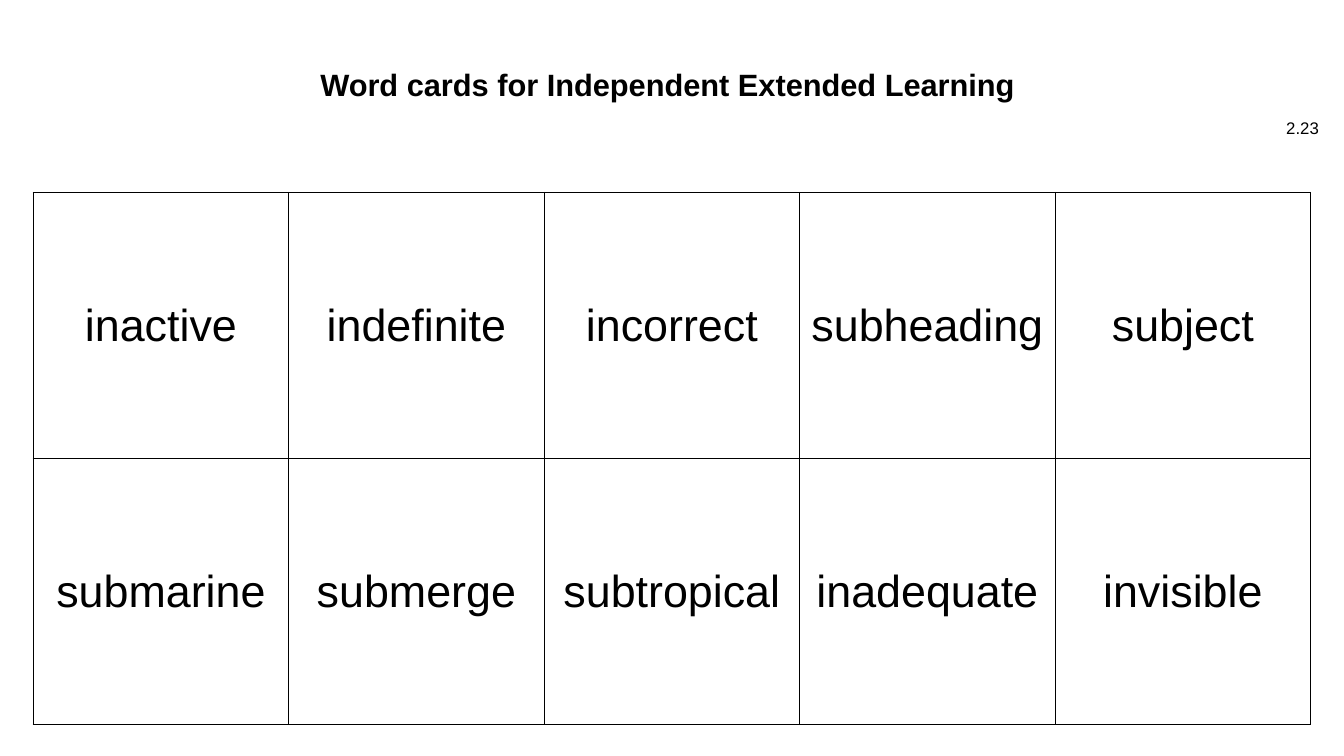
from dataclasses import dataclass

from lxml import etree
from pptx import Presentation, util as u
from pptx.dml.color import RGBColor
from pptx.enum import text
from pptx.oxml import ns

# Content
TITLE = "Word cards for Independent Extended Learning "
CARD_SET = "2.23"
WORDS = [
    ["inactive", "indefinite", "incorrect", "subheading", "subject"],
    ["submarine", "submerge", "subtropical", "inadequate", "invisible"],
]


@dataclass(frozen=True)
class Theme:
    font: str = "Arial"
    ink: str = "000000"
    paper: str = "FFFFFF"
    title_size: int = 22
    label_size: int = 12
    word_size: int = 32
    border: float = 1


THEME = Theme()

# Layout in inches: left, top, width, height
SLIDE = (13.33, 7.5)
TITLE_AREA = (2.31, 0.64, 8.71, 0.35)
LABEL_AREA = (12.55, 1.07, 0.63, 0.4)
GRID_LEFT, GRID_TOP = 0.33, 1.91
CARD_WIDTH, CARD_HEIGHT = 12.67 / len(WORDS[0]), 5.28 / len(WORDS)


def write(frame, words, size, align, bold=False):
    para = frame.paragraphs[0]
    para.text = words
    para.alignment = align
    font = para.font
    font.name, font.size, font.bold = THEME.font, u.Pt(size), bold
    font.color.rgb = RGBColor.from_string(THEME.ink)
    return para


def add_text(page, area, anchor, *style):
    frame = page.shapes.add_textbox(*map(u.Inches, area)).text_frame
    frame.word_wrap = True
    frame.vertical_anchor = anchor
    return write(frame, *style)


def outline(cell):
    properties = cell._tc.get_or_add_tcPr()
    for position, side in enumerate(("lnL", "lnR", "lnT", "lnB")):
        line = etree.Element(ns.qn(f"a:{side}"), w=str(u.Pt(THEME.border)))
        fill = etree.SubElement(line, ns.qn("a:solidFill"))
        etree.SubElement(fill, ns.qn("a:srgbClr"), val=THEME.ink)
        properties.insert(position, line)


def add_cards(page):
    rows, columns = len(WORDS), len(WORDS[0])
    area = (GRID_LEFT, GRID_TOP, columns * CARD_WIDTH, rows * CARD_HEIGHT)
    table = page.shapes.add_table(rows, columns, *map(u.Inches, area)).table
    table.first_row = table.horz_banding = False
    for r, row in enumerate(WORDS):
        for c, word in enumerate(row):
            cell = table.cell(r, c)
            cell.vertical_anchor = text.MSO_ANCHOR.MIDDLE
            cell.fill.solid()
            cell.fill.fore_color.rgb = RGBColor.from_string(THEME.paper)
            write(cell.text_frame, word, THEME.word_size, text.PP_ALIGN.CENTER)
            outline(cell)


def main():
    deck = Presentation()
    deck.slide_width, deck.slide_height = map(u.Inches, SLIDE)
    page = deck.slides.add_slide(deck.slide_layouts[6])

    # Heading and set number
    add_text(page, LABEL_AREA, text.MSO_ANCHOR.MIDDLE,
             CARD_SET, THEME.label_size, text.PP_ALIGN.RIGHT)
    title = add_text(page, TITLE_AREA, text.MSO_ANCHOR.TOP,
                     TITLE, THEME.title_size, text.PP_ALIGN.CENTER, True)
    title.line_spacing = 0.9

    # Word cards
    add_cards(page)
    deck.save("out.pptx")


if __name__ == "__main__":
    main()
